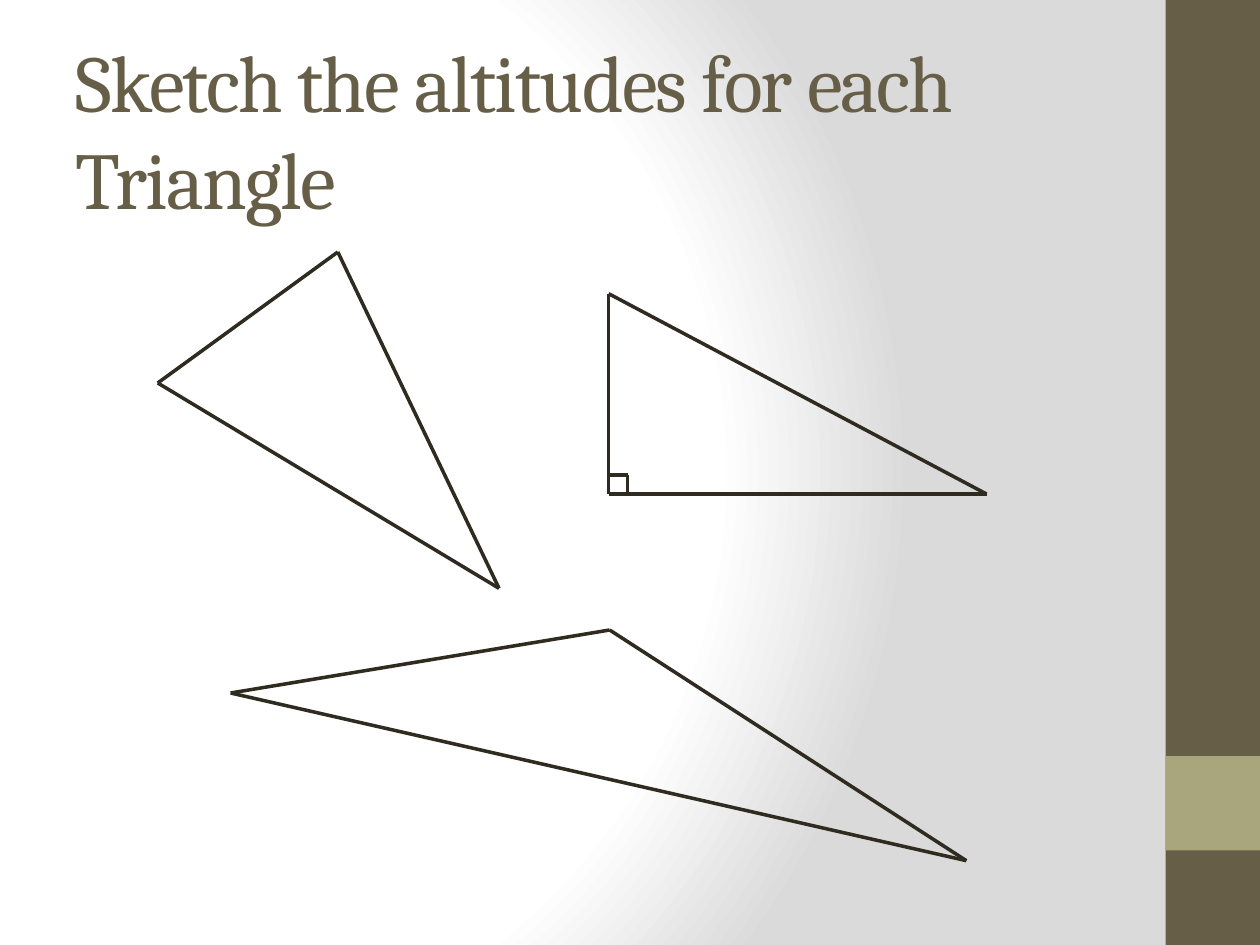
from itertools import pairwise

from lxml import etree
from pptx import Presentation
from pptx import util as u
from pptx.dml.color import RGBColor
from pptx.enum import shapes, text
from pptx.oxml import parse_xml
from pptx.oxml.ns import nsdecls, qn

# Content (lengths in cm)
TITLE = "Sketch the altitudes for each Triangle"
TITLE_BOX = (1.27, 0.76, 21.16, 3.68)
TITLE_FONT = {"name": "Cambria", "size": u.Pt(46), "bold": False}
FRAME = {"word_wrap": True, "vertical_anchor": text.MSO_ANCHOR.MIDDLE}

BROWN, OLIVE, INK = "675E47", "A9A57C", "2F2B20"
WIDTH, HEIGHT, BAND = 25.4, 19.05, 1.905
BANDS = [(0, HEIGHT, BROWN), (15.24, BAND, OLIVE)]  # top, height, colour
BG_STOPS = [(0, "FFFFFF"), (75, "FFFFFF"), (100, "DADADA")]

# Each triangle is a list of open or closed paths
CORNER_X, CORNER_Y, MARK = 12.27, 9.96, 0.38
ACUTE = [(6.81, 5.08), (10.06, 11.86), (3.18, 7.72)]
OBTUSE = [(4.65, 13.97), (12.29, 12.7), (19.48, 17.35)]
RIGHT = [(CORNER_X, CORNER_Y), (CORNER_X, 5.92), (19.89, CORNER_Y)]
RIGHT_MARK = [(CORNER_X + MARK, CORNER_Y), (CORNER_X + MARK, CORNER_Y - MARK),
              (CORNER_X, CORNER_Y - MARK)]
TRIANGLES = [
    [ACUTE + ACUTE[:1]],
    [OBTUSE + OBTUSE[:1]],
    [RIGHT + RIGHT[:1], RIGHT_MARK],
]


def rgb(value):
    return RGBColor.from_string(value)


def cm(*values):
    return [u.Cm(v) for v in values]


def set_background(s):
    s.background.fill.solid()
    stops = "".join(f'<a:gs pos="{pos * 1000}"><a:srgbClr val="{c}"/></a:gs>'
                    for pos, c in BG_STOPS)
    grad = parse_xml(
        f'<a:gradFill {nsdecls("a")} rotWithShape="1"><a:gsLst>{stops}</a:gsLst>'
        '<a:path path="circle"><a:fillToRect l="20000" t="50000" r="100000" b="50000"/>'
        '</a:path></a:gradFill>')
    solid = next(s.element.iter(qn("a:solidFill")))
    solid.getparent().replace(solid, grad)


def add_line(group, start, end):
    sp = group.shapes.add_connector(shapes.MSO_CONNECTOR.STRAIGHT, *cm(*start, *end))
    sp.line.color.rgb = rgb(INK)
    sp.line.width = u.Pt(2)
    etree.SubElement(sp.element.spPr, qn("a:effectLst"))


prs = Presentation()
prs.slide_width, prs.slide_height = cm(WIDTH, HEIGHT)
s = prs.slides.add_slide(prs.slide_layouts[6])
set_background(s)

# Side bands
for top, height, color in BANDS:
    sp = s.shapes.add_shape(shapes.MSO_SHAPE.RECTANGLE,
                            *cm(WIDTH - BAND, top, BAND, height))
    sp.shadow.inherit = False
    sp.fill.solid()
    sp.fill.fore_color.rgb = rgb(color)
    sp.line.fill.background()

# Title
tf = s.shapes.add_textbox(*cm(*TITLE_BOX)).text_frame
for key, value in FRAME.items():
    setattr(tf, key, value)
p = tf.paragraphs[0]
r = p.add_run()
r.text = TITLE
for key, value in TITLE_FONT.items():
    setattr(r.font, key, value)
r.font.color.rgb = rgb(BROWN)
r.font._element.set("spc", "-100")

# Triangles, one group each
for lines in TRIANGLES:
    group = s.shapes.add_group_shape()
    for points in lines:
        for start, end in pairwise(points):
            add_line(group, start, end)

prs.save("out.pptx")
